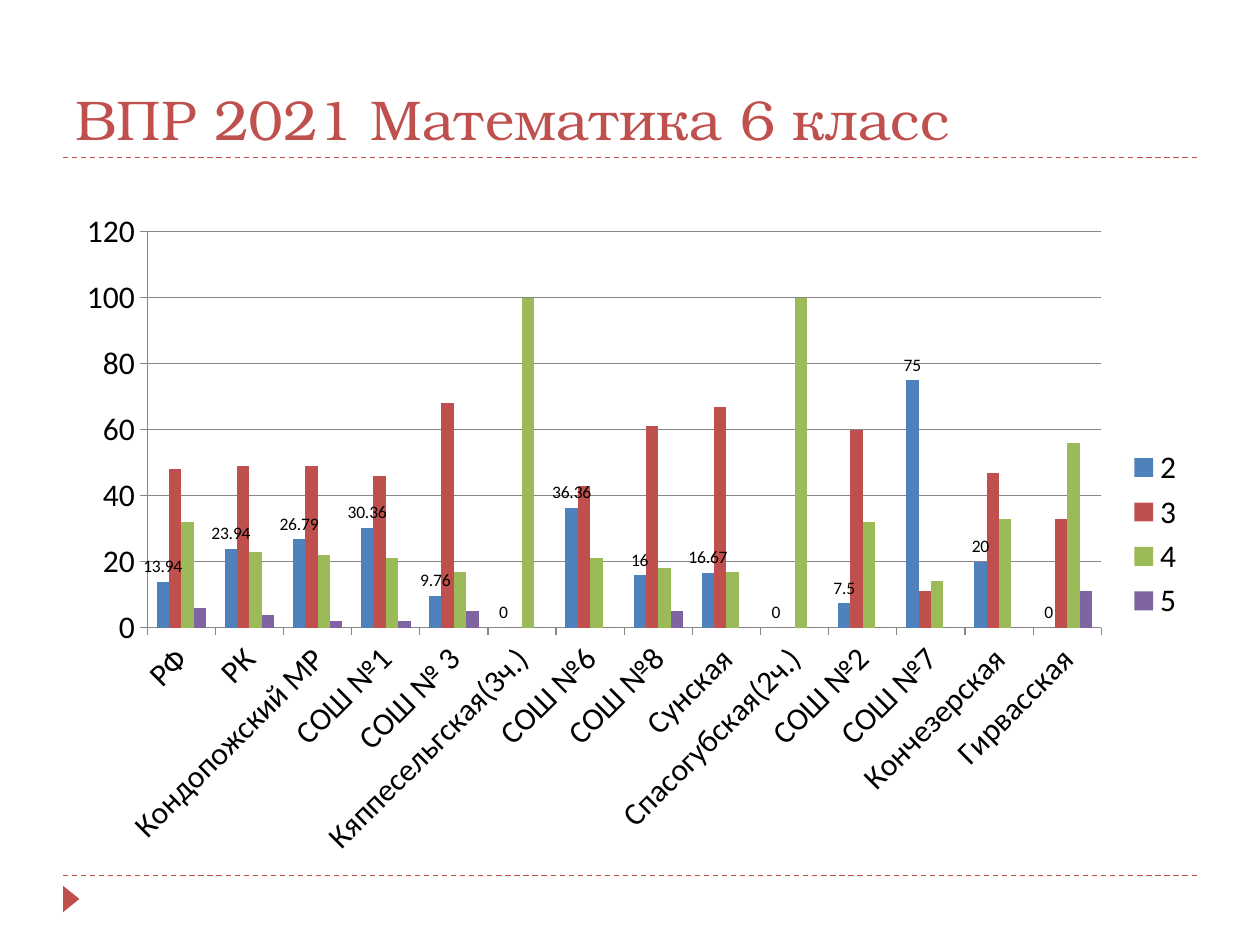
import pptx
import pptx.chart.data
import pptx.dml.color
import pptx.enum.chart
import pptx.enum.dml
import pptx.enum.shapes
import pptx.enum.text
import pptx.util
from lxml import etree

# Content
TITLE = "ВПР 2021 Математика 6 класс"
SCHOOLS = ["РФ", "РК", "Кондопожский МР", "СОШ №1", "СОШ № 3",
           "Кяппесельгская(3ч.)", "СОШ №6", "СОШ №8", "Сунская",
           "Спасогубская(2ч.)", "СОШ №2", "СОШ №7", "Кончезерская",
           "Гирвасская"]
GRADES = {
    "2": [13.94, 23.94, 26.79, 30.36, 9.76, 0, 36.36, 16, 16.67, 0, 7.5, 75, 20, 0],
    "3": [48, 49, 49, 46, 68, 0, 43, 61, 67, 0, 60, 11, 47, 33],
    "4": [32, 23, 22, 21, 17, 100, 21, 18, 17, 100, 32, 14, 33, 56],
    "5": [6, 4, 2, 2, 5, 0, 0, 5, 0, 0, 0, 0, 0, 11],
}
COLORS = {"accent": "C0504D", "text": "000000", "grid": "868686",
          "2": "4F81BD", "3": "C0504D", "4": "9BBB59", "5": "8064A2"}

# Slide frame, in inches
WIDTH, HEIGHT = 10, 7.5
MARGIN = WIDTH / 20
INNER = WIDTH - 2 * MARGIN
TITLE_RULE, FOOT_RULE = 1.25, 6.95

Inches, Pt = pptx.util.Inches, pptx.util.Pt


def color(name):
    return pptx.dml.color.RGBColor.from_string(COLORS[name])


def style_line(line, name):
    line.color.rgb = color(name)
    line.width = Pt(0.75)


deck = pptx.Presentation()
deck.slide_width, deck.slide_height = Inches(WIDTH), Inches(HEIGHT)
page = deck.slides.add_slide(deck.slide_layouts[6])

# Dashed rules
for y in (FOOT_RULE, TITLE_RULE):
    rule = page.shapes.add_connector(
        pptx.enum.shapes.MSO_CONNECTOR.STRAIGHT,
        Inches(MARGIN), Inches(y), Inches(WIDTH - MARGIN), Inches(y))
    style_line(rule.line, "accent")
    rule.line.dash_style = pptx.enum.dml.MSO_LINE.DASH
    etree.SubElement(rule._element.spPr, pptx.oxml.ns.qn("a:effectLst"))

# Corner marker
marker = page.shapes.add_shape(
    pptx.enum.shapes.MSO_SHAPE.ISOSCELES_TRIANGLE,
    Inches(0.46), Inches(7.07), Inches(0.21), Inches(0.13))
marker.rotation = 90
marker.shadow.inherit = False
marker.fill.solid()
marker.fill.fore_color.rgb = color("accent")
marker.line.fill.background()

# Title, standing on the upper rule
box = page.shapes.add_textbox(Inches(MARGIN), Inches(0.17),
                              Inches(INNER), Inches(TITLE_RULE - 0.17))
frame = box.text_frame
frame.word_wrap = True
frame.vertical_anchor = pptx.enum.text.MSO_ANCHOR.BOTTOM
frame.text = TITLE
span = frame.paragraphs[0].runs[0]
span.font.name = "TeX Gyre Bonum"
span.font.size = Pt(32)
span.font.color.rgb = color("accent")

# Chart
data = pptx.chart.data.CategoryChartData()
data.categories = SCHOOLS
for grade, shares in GRADES.items():
    data.add_series(grade, shares)
chart = page.shapes.add_chart(
    pptx.enum.chart.XL_CHART_TYPE.COLUMN_CLUSTERED,
    Inches(0.51), Inches(1.58), Inches(8.99), Inches(5.32), data).chart
chart.has_title = False
chart.font.name = "Calibri"
chart.font.size = Pt(18)
chart.font.color.rgb = color("text")
chart.has_legend = True
chart.legend.position = pptx.enum.chart.XL_LEGEND_POSITION.RIGHT
chart.legend.include_in_layout = False

# Axes
for axis in (chart.category_axis, chart.value_axis):
    axis.major_tick_mark = pptx.enum.chart.XL_TICK_MARK.OUTSIDE
    style_line(axis.format.line, "grid")
chart.value_axis.has_major_gridlines = True
style_line(chart.value_axis.major_gridlines.format.line, "grid")

# Columns
plot = chart.plots[0]
plot.gap_width = 150
plot.overlap = 0
plot.vary_by_categories = False
for series in plot.series:
    series.invert_if_negative = False
    series.format.fill.solid()
    series.format.fill.fore_color.rgb = color(series.name)

# Only the lowest grade carries its values
labels = plot.series[0].data_labels
labels.show_value = True
labels.position = pptx.enum.chart.XL_LABEL_POSITION.OUTSIDE_END
labels.font.size = Pt(10)
labels.font.color.rgb = color("text")

deck.save("out.pptx")
